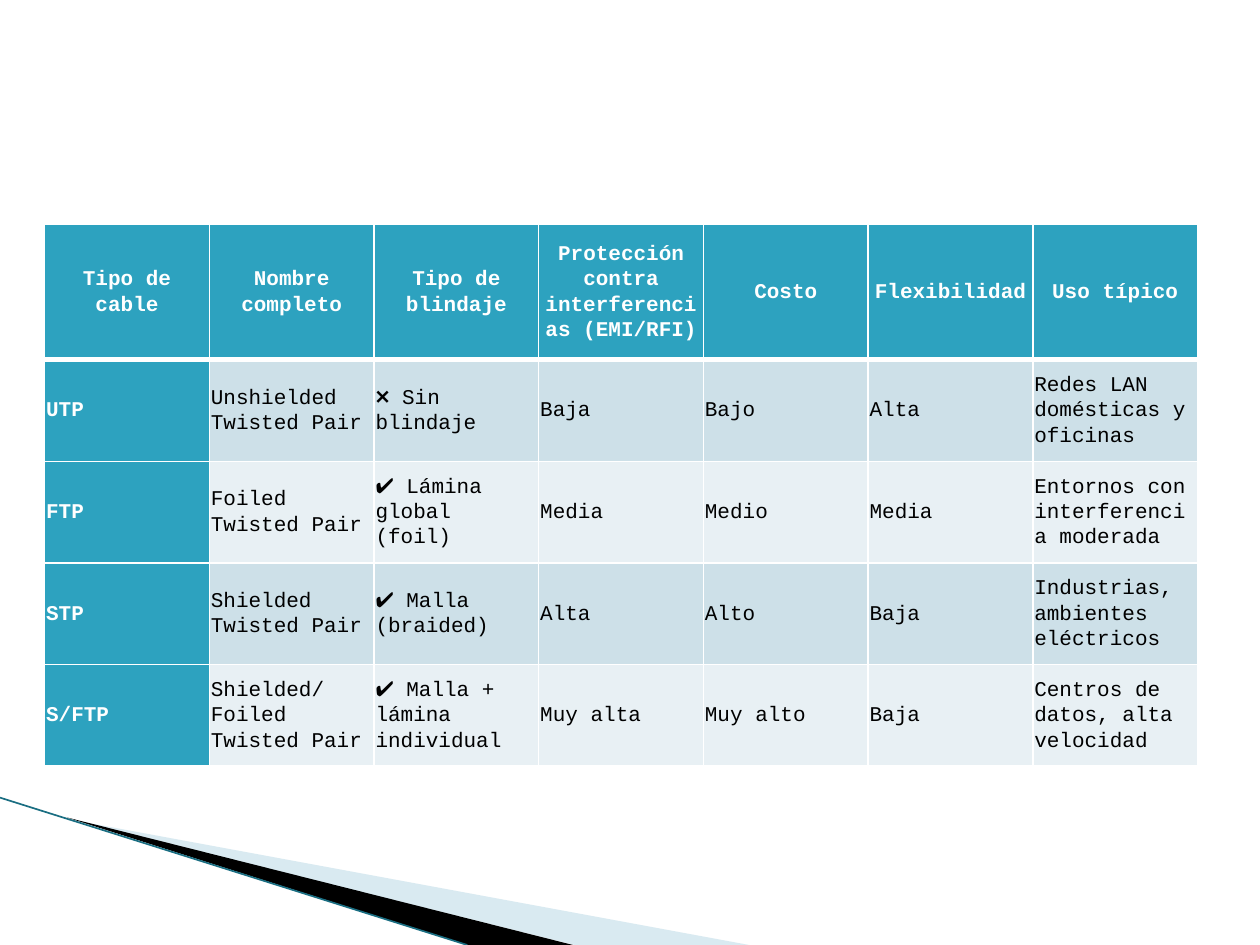
from lxml import etree
from pptx import Presentation
from pptx.dml.color import RGBColor
from pptx.enum.shapes import MSO_CONNECTOR
from pptx.enum.text import MSO_ANCHOR, PP_ALIGN
from pptx.oxml import parse_xml
from pptx.oxml.ns import nsdecls, qn
from pptx.util import Cm, Pt

WHITE = RGBColor(0xFF, 0xFF, 0xFF)
BLACK = RGBColor(0x00, 0x00, 0x00)
TEAL = RGBColor(0x2D, 0xA2, 0xBF)
DARK_TEAL = RGBColor(0x1A, 0x6E, 0x82)
PALE_BLUE = RGBColor(0xA0, 0xCB, 0xDC)
BANDS = [RGBColor(0xE8, 0xF0, 0xF4), RGBColor(0xCD, 0xE0, 0xE8)]

ROWS = [
    ["Tipo de cable", "Nombre completo", "Tipo de blindaje",
     "Protección contra interferencias (EMI/RFI)", "Costo", "Flexibilidad", "Uso típico"],
    ["UTP", "Unshielded Twisted Pair", "❌ Sin blindaje", "Baja", "Bajo", "Alta",
     "Redes LAN domésticas y oficinas"],
    ["FTP", "Foiled Twisted Pair", "✔️ Lámina global (foil)", "Media", "Medio", "Media",
     "Entornos con interferencia moderada"],
    ["STP", "Shielded Twisted Pair", "✔️ Malla (braided)", "Alta", "Alto", "Baja",
     "Industrias, ambientes eléctricos"],
    ["S/FTP", "Shielded/Foiled Twisted Pair", "✔️ Malla + lámina individual", "Muy alta",
     "Muy alto", "Baja", "Centros de datos, alta velocidad"],
]


def add_wedge(slide, points, color):
    start, *rest = [(Cm(x), Cm(y)) for x, y in points]
    fb = slide.shapes.build_freeform(*start)
    fb.add_line_segments(rest, close=True)
    sp = fb.convert_to_shape()
    sp.shadow.inherit = False
    sp.fill.solid()
    sp.fill.fore_color.rgb = color
    sp.line.fill.background()
    return sp


def set_borders(cell, widths):
    tcPr = cell._tc.get_or_add_tcPr()
    for i, (side, width) in enumerate(widths.items()):
        tcPr.insert(i, parse_xml(
            f'<a:ln{side} {nsdecls("a")} w="{Pt(width)}"><a:solidFill>'
            f'<a:srgbClr val="{WHITE}"/></a:solidFill></a:ln{side}>'))


prs = Presentation()
prs.slide_width, prs.slide_height = Cm(25.4), Cm(19.05)
slide = prs.slides.add_slide(prs.slide_layouts[6])

pale = add_wedge(slide, [(1.4, 16.52), (15.1, 19.05), (11.58, 19.05)], PALE_BLUE)
clr = pale.fill._xPr.find(qn("a:solidFill"))[0]
etree.SubElement(clr, qn("a:alpha"), val="40000")
add_wedge(slide, [(1.35, 16.48), (11.55, 19.05), (9.42, 19.05)], BLACK)

edge = slide.shapes.add_connector(MSO_CONNECTOR.STRAIGHT, Cm(0), Cm(16.08), Cm(9.42), Cm(19.05))
edge.line.color.rgb = DARK_TEAL
edge.line.width = Pt(0.95)
etree.SubElement(edge._element.spPr, qn("a:effectLst"))

col_width, head_height, row_height = Cm(3.32), Cm(2.72), Cm(2.05)
n_rows, n_cols = len(ROWS), len(ROWS[0])
table = slide.shapes.add_table(n_rows, n_cols, Cm(0.9), Cm(4.53), col_width * n_cols,
                               head_height + row_height * (n_rows - 1)).table
table.first_col = True
for col in table.columns:
    col.width = col_width
for i, row in enumerate(ROWS):
    table.rows[i].height = row_height if i else head_height
    for j, text in enumerate(row):
        cell = table.cell(i, j)
        heading = i == 0 or j == 0
        cell.fill.solid()
        cell.fill.fore_color.rgb = TEAL if heading else BANDS[i % 2]
        cell.vertical_anchor = MSO_ANCHOR.MIDDLE
        cell.margin_left = cell.margin_right = cell.margin_top = cell.margin_bottom = Cm(0.03)
        set_borders(cell, {"L": 1, "R": 1, "T": 3 if i == 1 else 1, "B": 1 if i else 3})
        p = cell.text_frame.paragraphs[0]
        p.alignment = PP_ALIGN.LEFT if i else PP_ALIGN.CENTER
        p.line_spacing = 1.07
        r = p.add_run()
        r.text = text
        r.font.name = "Courier New"
        r.font.size = Pt(12)
        r.font.bold = heading
        r.font.color.rgb = WHITE if heading else BLACK

prs.save("out.pptx")
